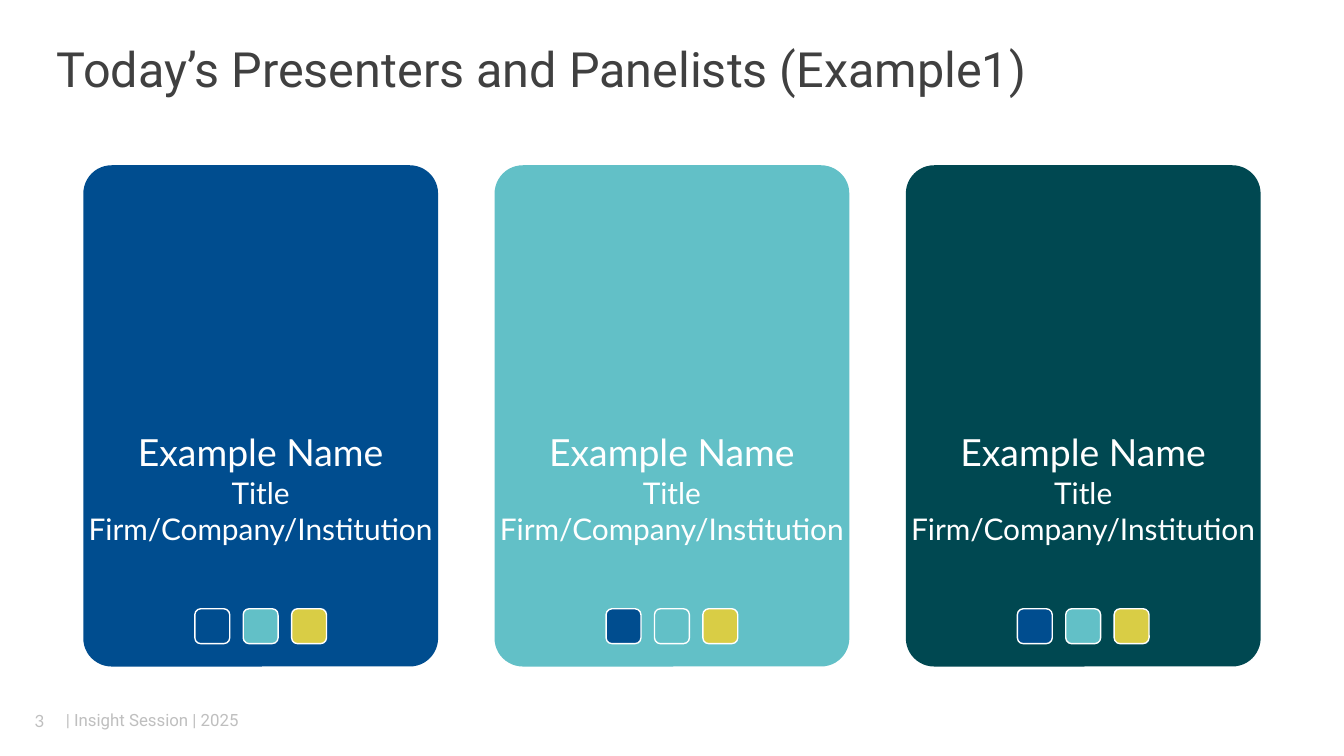
import pptx
import pptx.dml.color
import pptx.enum.shapes
import pptx.enum.text
import pptx.util

Inches = pptx.util.Inches
ALIGN = pptx.enum.text.PP_ALIGN
ROUNDED = pptx.enum.shapes.MSO_SHAPE.ROUNDED_RECTANGLE

BLUE, TEAL, PINE, YELLOW = "004D8F", "62C0C7", "004851", "D9CD45"
WHITE, DARK, GRAY = "FFFFFF", "404040", "BFBFBF"
PRESENTER = [("Example Name", 20), ("Title", 16), ("Firm/Company/Institution", 16)]


def rgb(color):
    """Return the colour for a hex string."""
    return pptx.dml.color.RGBColor.from_string(color)


def write(sp, lines, font, color, align, margin=0):
    """Fill a shape with vertically centred (text, size) lines."""
    tf = sp.text_frame
    tf.word_wrap = True
    tf.auto_size = pptx.enum.text.MSO_AUTO_SIZE.NONE
    tf.vertical_anchor = pptx.enum.text.MSO_ANCHOR.MIDDLE
    tf.margin_left = tf.margin_right = Inches(margin)
    tf.margin_top = tf.margin_bottom = Inches(margin / 2)
    for i, (text, size) in enumerate(lines):
        p = tf.add_paragraph() if i else tf.paragraphs[0]
        p.text = text
        p.alignment = align
        p.font.name = font
        p.font.size = pptx.util.Pt(size)
        p.font.color.rgb = rgb(color)


def add_rounded(shapes, x, y, w, h, fill, radius):
    """Add a filled rounded rectangle without outline or shadow."""
    sp = shapes.add_shape(ROUNDED, Inches(x), Inches(y), Inches(w), Inches(h))
    sp.shadow.inherit = False
    sp.adjustments[0] = radius
    sp.fill.solid()
    sp.fill.fore_color.rgb = rgb(fill)
    sp.line.fill.background()
    return sp


def add_title(s, x, y, w, h):
    """Place the slide title in its placeholder."""
    sp = s.shapes.title
    sp.left, sp.top, sp.width, sp.height = map(Inches, (x, y, w, h))
    write(sp, [("Today’s Presenters and Panelists (Example1)", 26)],
          "Roboto", DARK, ALIGN.LEFT)
    sp.text_frame.paragraphs[0].line_spacing = 0.9


def add_badges(s, x, y, size=0.26, step=0.36):
    """Add the grouped row of social badges."""
    group = s.shapes.add_group_shape()
    for i, fill in enumerate((BLUE, TEAL, YELLOW)):
        sp = add_rounded(group.shapes, x + i * step, y, size, size, fill, 0.17)
        sp.line.color.rgb = rgb(WHITE)
        sp.line.width = pptx.util.Pt(0.75)


def add_card(s, x, y, w, h, fill):
    """Add one presenter card with its text and badges."""
    add_rounded(s.shapes, x, y, w, h, fill, 0.08)
    sp = s.shapes.add_textbox(Inches(x), Inches(y + 1.96), Inches(w), Inches(0.88))
    write(sp, PRESENTER, "Lato", WHITE, ALIGN.CENTER)
    add_badges(s, x + 0.83, y + 3.3)


def add_footer(s, x, y, h):
    """Add the page number and session name."""
    sp = s.shapes.add_textbox(Inches(x), Inches(y), Inches(0.43), Inches(h))
    write(sp, [("3", 9)], "Lato", GRAY, ALIGN.CENTER, 0.1)
    sp = s.shapes.add_textbox(Inches(x + 0.41), Inches(y + 0.07), Inches(2), Inches(h / 2))
    write(sp, [("| Insight Session | 2025", 9)], "Roboto", GRAY, ALIGN.LEFT)


def main():
    """Build and save the presenters slide."""
    prs = pptx.Presentation()
    prs.slide_width = Inches(10)
    prs.slide_height = prs.slide_width * 9 // 16
    s = prs.slides.add_slide(prs.slide_layouts[5])
    add_title(s, 0.42, 0.31, 9.15, 0.45)
    for i, fill in enumerate((BLUE, TEAL, PINE)):
        add_card(s, 0.62 + i * 3.06, 1.23, 2.64, 3.73, fill)
    add_footer(s, 0.08, 5.21, 0.3)
    prs.save("out.pptx")


if __name__ == "__main__":
    main()
